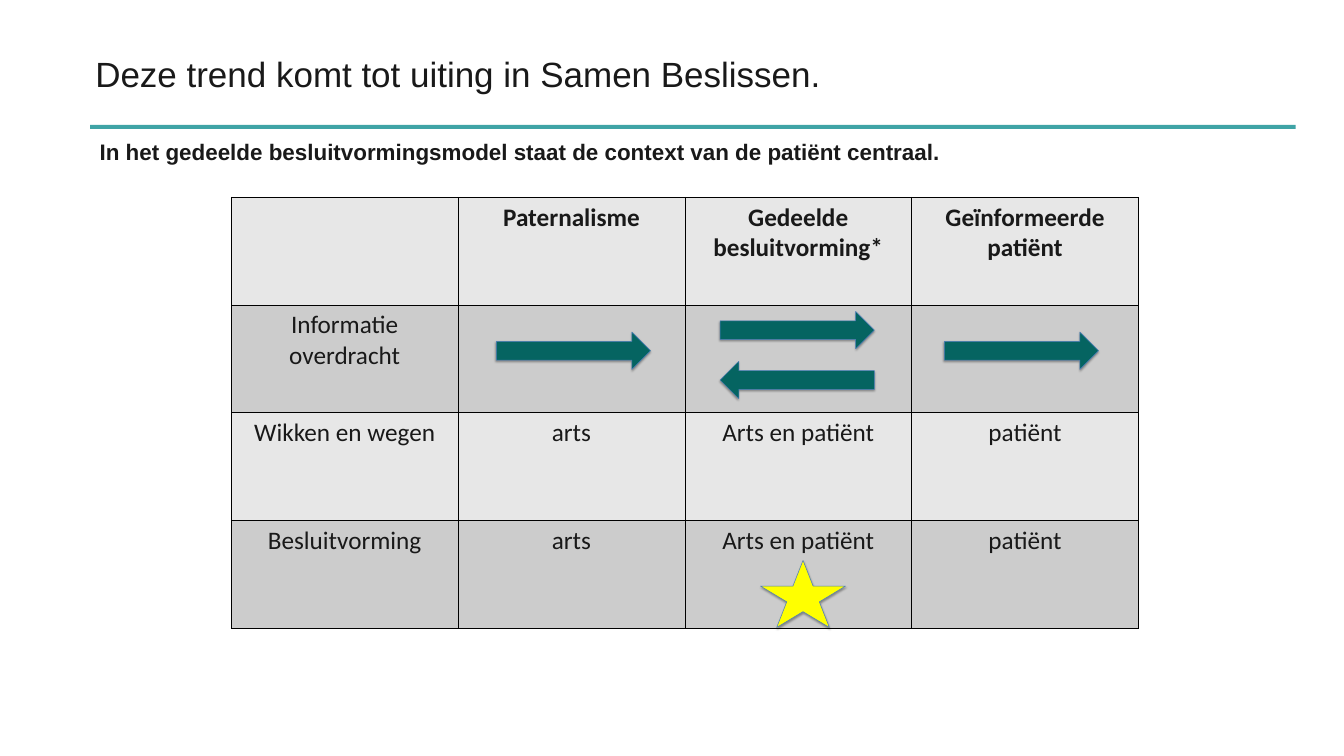
from lxml.etree import SubElement
from pptx import Presentation
from pptx.dml.color import RGBColor
from pptx.enum.shapes import MSO_SHAPE
from pptx.enum.text import MSO_ANCHOR, MSO_AUTO_SIZE, PP_ALIGN
from pptx.oxml import parse_xml
from pptx.oxml.ns import nsdecls, qn
from pptx.util import Inches, Pt

COLORS = {
    "text": "191919", "rule": "3FA4A6", "border": "000000",
    "light": "E7E7E7", "dark": "CCCCCC",
    "arrow": "056461", "star": "FFFF00", "outline": "4B7EBC",
}

# Table grid, in inches
TABLE_LEFT, TABLE_TOP = 4.59, 3.91
COLUMN_WIDTH, ROW_HEIGHT = 4.5, 2.14
ROWS = [
    ["", "Paternalisme", "Gedeelde besluitvorming*", "Geïnformeerde patiënt"],
    ["Informatie overdracht", "", "", ""],
    ["Wikken en wegen", "arts", "Arts en patiënt", "patiënt"],
    ["Besluitvorming", "arts", "Arts en patiënt", "patiënt"],
]

# Arrows: row, column, offset within the cell, rotation
ARROWS = [
    (1, 1, 0.76, 0.54, 0),
    (1, 3, 0.65, 0.54, 0),
    (1, 2, 0.7, 0.13, 0),
    (1, 2, 0.7, 1.12, 180),
]


def color(name):
    return RGBColor.from_string(COLORS[name])


def box(*lengths):
    return [Inches(length) for length in lengths]


def style(paragraph, font_name, size, bold, align):
    paragraph.alignment = align
    paragraph.font.name = font_name
    paragraph.font.size = Pt(size)
    paragraph.font.bold = bold
    paragraph.font.color.rgb = color("text")


def add_heading(slide):
    # Title
    title = slide.shapes.title
    title.left, title.top, title.width, title.height = box(1.79, 0.57, 23.86, 1.78)
    title.text_frame.text = "Deze trend komt tot uiting in Samen Beslissen."
    title.text_frame.auto_size = MSO_AUTO_SIZE.NONE
    title.text_frame.vertical_anchor = MSO_ANCHOR.MIDDLE
    style(title.text_frame.paragraphs[0], "Arial", 50, False, PP_ALIGN.LEFT)

    # Rule under the title
    rule = slide.shapes.add_shape(MSO_SHAPE.RECTANGLE, *box(1.79, 2.48, 23.92, 0.08))
    rule.shadow.inherit = False
    rule.fill.solid()
    rule.fill.fore_color.rgb = color("rule")
    rule.line.fill.background()

    # Subtitle
    subtitle = slide.shapes.add_textbox(*box(1.88, 2.69, 18.27, 0.64)).text_frame
    subtitle.word_wrap = True
    subtitle.auto_size = MSO_AUTO_SIZE.SHAPE_TO_FIT_TEXT
    subtitle.text = ("In het gedeelde besluitvormingsmodel staat "
                     "de context van de patiënt centraal.")
    style(subtitle.paragraphs[0], "Arial", 32, True, PP_ALIGN.LEFT)


def add_borders(cell):
    properties = cell._tc.get_or_add_tcPr()
    for position, side in enumerate(("lnL", "lnR", "lnT", "lnB")):
        properties.insert(position, parse_xml(
            f'<a:{side} {nsdecls("a")} w="{Pt(1)}"><a:solidFill>'
            f'<a:srgbClr val="{COLORS["border"]}"/></a:solidFill></a:{side}>'))


def add_model_table(slide):
    row_count, column_count = len(ROWS), len(ROWS[0])
    table = slide.shapes.add_table(
        row_count, column_count,
        *box(TABLE_LEFT, TABLE_TOP,
             column_count * COLUMN_WIDTH, row_count * ROW_HEIGHT)).table
    for row, texts in enumerate(ROWS):
        for column, text in enumerate(texts):
            cell = table.cell(row, column)
            cell.fill.solid()
            cell.fill.fore_color.rgb = color("dark" if row % 2 else "light")
            cell.margin_left = cell.margin_right = Inches(0.2)
            cell.margin_top = cell.margin_bottom = Inches(0.1)
            cell.text = text
            style(cell.text_frame.paragraphs[0], "Calibri", 36, row == 0,
                  PP_ALIGN.CENTER)
            add_borders(cell)


def add_symbol(slide, kind, row, column, dx, dy, width, height, fill):
    symbol = slide.shapes.add_shape(kind, *box(
        TABLE_LEFT + column * COLUMN_WIDTH + dx,
        TABLE_TOP + row * ROW_HEIGHT + dy, width, height))
    symbol.fill.solid()
    symbol.fill.fore_color.rgb = color(fill)
    symbol.line.color.rgb = color("outline")
    symbol.line.width = Pt(0.75)

    # Soft shadow straight below
    symbol.shadow.inherit = False
    effects = symbol._element.spPr.find(qn("a:effectLst"))
    shadow = SubElement(effects, qn("a:outerShdw"), blurRad=str(Pt(3.1)),
                        dist=str(Pt(1.8)), dir="5400000", rotWithShape="0")
    shade = SubElement(shadow, qn("a:srgbClr"), val="000000")
    SubElement(shade, qn("a:alpha"), val="35000")
    return symbol


def main():
    presentation = Presentation()
    presentation.slide_width, presentation.slide_height = box(26.67, 15)
    slide = presentation.slides.add_slide(presentation.slide_layouts[5])

    add_heading(slide)
    add_model_table(slide)
    for row, column, dx, dy, rotation in ARROWS:
        arrow = add_symbol(slide, MSO_SHAPE.RIGHT_ARROW, row, column, dx, dy,
                           3.06, 0.74, "arrow")
        arrow.rotation = rotation
    add_symbol(slide, MSO_SHAPE.STAR_5_POINT, 3, 2, 1.5, 0.79, 1.69, 1.33, "star")

    presentation.save("out.pptx")


if __name__ == "__main__":
    main()
